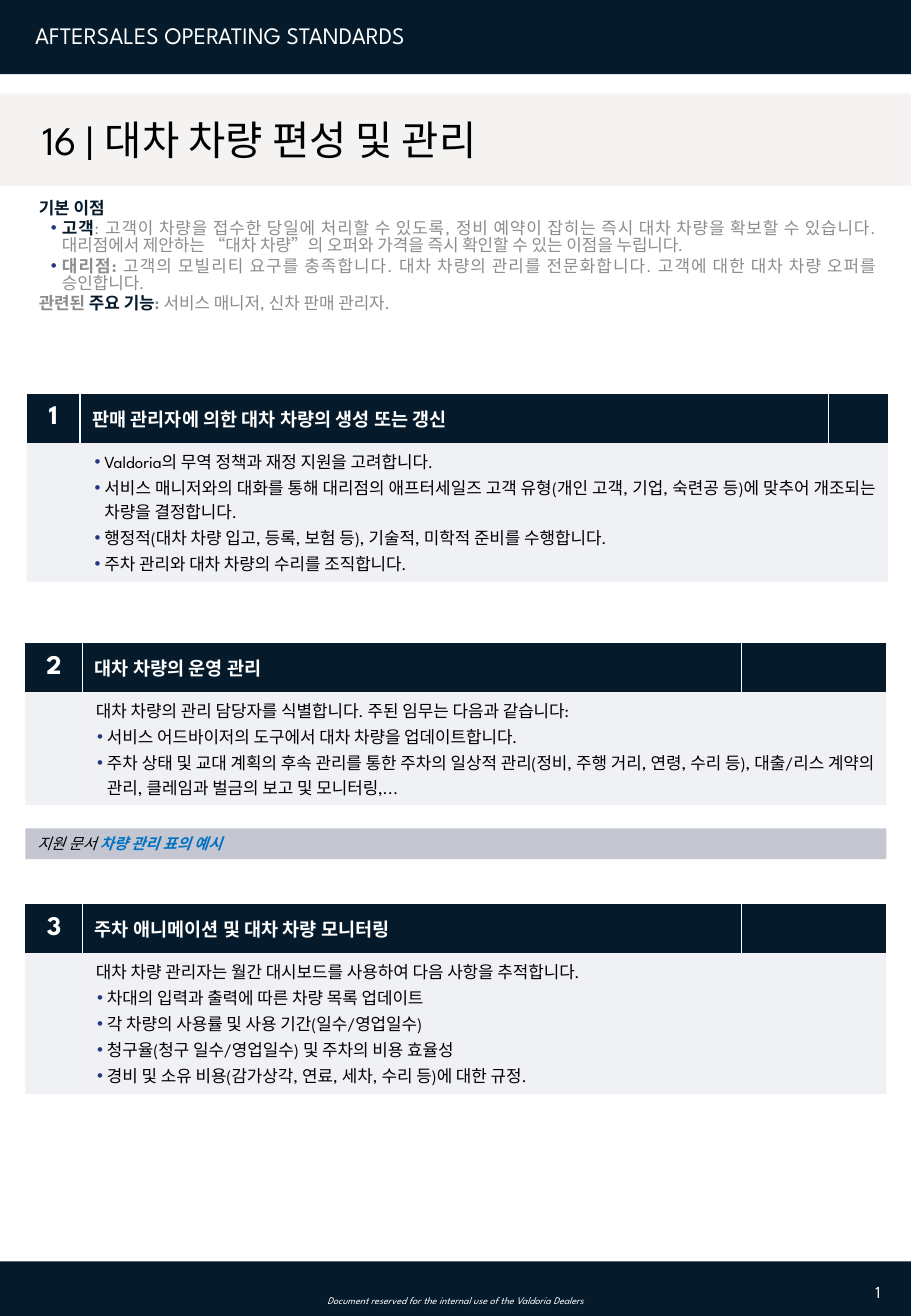
from lxml.etree import SubElement
from pptx import Presentation
from pptx.dml.color import RGBColor
from pptx.enum.shapes import MSO_SHAPE
from pptx.enum.text import MSO_ANCHOR, MSO_AUTO_SIZE, PP_ALIGN
from pptx.oxml import parse_xml
from pptx.oxml.ns import nsdecls, qn
from pptx.util import Pt

FACE = "League Spartan"
NAVY, WHITE, BLACK, GRAY = "051A2B", "FFFFFF", "000000", "8C8C8C"
PLAIN = "{2D5ABB26-0587-4C30-8999-92F81FD0307C}"


def paint(fill, color):
    fill.solid()
    fill.fore_color.rgb = RGBColor.from_string(color)


def mark(para, dot):
    props = para._p.get_or_add_pPr()
    if dot:
        tint = SubElement(props, qn("a:buClr"))
        SubElement(tint, qn("a:srgbClr"), val="243782")
        SubElement(props, qn("a:buFont"), typeface="Arial")
        SubElement(props, qn("a:buChar"), char="•")
    else:
        SubElement(props, qn("a:buNone"))


def write(frame, text, size=10, color=BLACK, bold=False, italic=False,
          align=PP_ALIGN.LEFT, left=0, hang=0, before=0, after=0, line=1.0,
          dot=False, join=False):
    """Add a paragraph, or with join a further run to the last one."""
    para = frame.paragraphs[-1]
    if not join:
        first = not frame.text
        if not first:
            para = frame.add_paragraph()
        props = para._p.get_or_add_pPr()
        props.set("marL", str(Pt(left)))
        props.set("indent", str(Pt(-hang)))
        para.alignment = align
        para.line_spacing = line
        para.space_before = Pt(0 if first else before)
        para.space_after = Pt(after)
        mark(para, dot)
    run = para.add_run()
    run.text = text
    font = run.font
    font.name, font.size, font.bold, font.italic = FACE, Pt(size), bold, italic
    font.color.rgb = RGBColor.from_string(color)


def setup(frame, side=7.2, edge=3.6, anchor=MSO_ANCHOR.MIDDLE):
    frame.word_wrap = True
    frame.auto_size = MSO_AUTO_SIZE.NONE
    frame.margin_left = frame.margin_right = Pt(side)
    frame.margin_top = frame.margin_bottom = Pt(edge)
    frame.vertical_anchor = anchor
    return frame


def place(shape, box):
    shape.left, shape.top, shape.width, shape.height = map(Pt, box)


def bar(slide, box, color):
    shape = slide.shapes.add_shape(MSO_SHAPE.RECTANGLE, *map(Pt, box))
    shape.shadow.inherit = False
    paint(shape.fill, color)
    shape.line.fill.background()
    return shape


def label(slide, box, text, side=7.2, edge=3.6, **look):
    shape = slide.shapes.add_textbox(*map(Pt, box))
    write(setup(shape.text_frame, side, edge), text, **look)


def header(slide, x, y, w, h):
    bar(slide, (x, y, w, h), NAVY)
    label(slide, (x + 15, y + 11.5, 343, 21), "AFTERSALES OPERATING STANDARDS",
          side=5.8, edge=2.9, size=14, color=WHITE, line=0.9)


def footer(slide, x, y, w, h):
    bar(slide, (x, y, w, h), NAVY)
    label(slide, (x + 15, y + 18.7, w - 30, 9),
          "Document reserved for the internal use of the Valdoria Dealers",
          side=0, edge=0, size=6, color=WHITE, italic=True,
          align=PP_ALIGN.CENTER)
    label(slide, (x + w - 55, y + 8.6, 44, 19.4), "1", color=WHITE,
          align=PP_ALIGN.RIGHT)


def title(slide, *box):
    shape = slide.shapes.title
    place(shape, box)
    paint(shape.fill, "F4F3F1")
    write(setup(shape.text_frame), "16 | 대차 차량 편성 및 관리", size=24, left=18)


def intro(slide, *box):
    shape = slide.placeholders[1]
    place(shape, box)
    frame = setup(shape.text_frame, anchor=MSO_ANCHOR.TOP)
    base = dict(align=PP_ALIGN.JUSTIFY, after=2, line=0.84, bold=True)
    item = dict(base, left=13.7, hang=6.5, dot=True)
    rest = dict(color=GRAY, join=True)
    write(frame, "기본 이점", color=NAVY, **base)
    write(frame, "고객", color=NAVY, **item)
    write(frame, ": 고객이 차량을 접수한 당일에 처리할 수 있도록, 정비 예약이 잡히는 즉시 "
          "대차 차량을 확보할 수 있습니다. 대리점에서 제안하는 “대차 차량”의 오퍼와 가격을 "
          "즉시 확인할 수 있는 이점을 누립니다.", **rest)
    write(frame, "대리점:", color=GRAY, **item)
    write(frame, " 고객의 모빌리티 요구를 충족합니다. 대차 차량의 관리를 전문화합니다. "
          "고객에 대한 대차 차량 오퍼를 승인합니다.", **rest)
    write(frame, "관련된 ", color=GRAY, **base)
    write(frame, "주요 기능", color=NAVY, bold=True, join=True)
    write(frame, ":", bold=True, **rest)
    write(frame, " 서비스 매니저, 신차 판매 관리자.", **rest)


def edge(cell, side):
    cell._tc.get_or_add_tcPr().insert(0, parse_xml(
        f'<a:{side} {nsdecls("a")} w="{Pt(1)}"><a:solidFill>'
        f'<a:srgbClr val="{WHITE}"/></a:solidFill></a:{side}>'))


def step(slide, x, y, cols, rows, num, head, items, lead=None):
    """Draw a numbered table: a dark heading over a list of items."""
    box = map(Pt, (x, y, sum(cols), sum(rows)))
    table = slide.shapes.add_table(2, len(cols), *box).table
    table.first_row = table.horz_banding = False
    table._tbl.tblPr[0].text = PLAIN
    for col, width in zip(table.columns, cols):
        col.width = Pt(width)
    for row, height in zip(table.rows, rows):
        row.height = Pt(height)
    table.cell(1, 1).merge(table.cell(1, 2))
    for i, row in enumerate(table.rows):
        for cell in row.cells:
            cell.vertical_anchor = MSO_ANCHOR.MIDDLE
            paint(cell.fill, "E7E9ED" if i else NAVY)
            if i:
                tint = cell._tc.tcPr.find(".//" + qn("a:srgbClr"))
                SubElement(tint, qn("a:alpha"), val="60000")
    edge(table.cell(0, 0), "lnR")
    edge(table.cell(0, 1), "lnL")
    write(table.cell(0, 0).text_frame, num, size=16, color=WHITE, bold=True,
          align=PP_ALIGN.CENTER)
    write(table.cell(0, 1).text_frame, head, size=11, color=WHITE, bold=True)
    frame = table.cell(1, 1).text_frame
    if lead:
        write(frame, lead, align=PP_ALIGN.JUSTIFY, left=0.7)
    for item in items:
        write(frame, item, align=PP_ALIGN.JUSTIFY, left=7.2, hang=5.8,
              before=1, dot=True)


def aid(slide, *box):
    frame = setup(bar(slide, box, "C4C7D2").text_frame, edge=0)
    write(frame, "지원 문서 ", size=9, italic=True)
    write(frame, "차량 관리 표의 예시", size=9, color="0070C0", bold=True,
          italic=True, join=True)


def main():
    deck = Presentation()
    deck.slide_width, deck.slide_height = Pt(540), Pt(779.76)
    slide = deck.slides.add_slide(deck.slide_layouts[1])
    header(slide, 0, 0, 540, 44)
    footer(slide, 0, 747.4, 540, 32.4)
    title(slide, 0, 55.4, 540, 54.8)
    intro(slide, 15.8, 115.2, 510.5, 111.6)
    step(slide, 15.8, 233.3, (31.7, 443.5, 35.3), (28.2, 81), "1",
         "판매 관리자에 의한 대차 차량의 생성 또는 갱신", (
             "Valdoria의 무역 정책과 재정 지원을 고려합니다.",
             "서비스 매니저와의 대화를 통해 대리점의 애프터세일즈 고객 유형"
             "(개인 고객, 기업, 숙련공 등)에 맞추어 개조되는 차량을 결정합니다.",
             "행정적(대차 차량 입고, 등록, 보험 등), 기술적, 미학적 준비를 수행합니다.",
             "주차 관리와 대차 차량의 수리를 조직합니다."))
    cols = (34, 390.5, 86)
    step(slide, 15, 381, cols, (25.6, 66), "2", "대차 차량의 운영 관리", (
        "서비스 어드바이저의 도구에서 대차 차량을 업데이트합니다.",
        "주차 상태 및 교대 계획의 후속 관리를 통한 주차의 일상적 관리"
        "(정비, 주행 거리, 연령, 수리 등), 대출/리스 계약의 관리, "
        "클레임과 벌금의 보고 및 모니터링,..."),
        lead="대차 차량의 관리 담당자를 식별합니다. 주된 임무는 다음과 같습니다:")
    aid(slide, 15, 490.8, 510.5, 18.3)
    step(slide, 15, 535.7, cols, (25.6, 82), "3", "주차 애니메이션 및 대차 차량 모니터링", (
        "차대의 입력과 출력에 따른 차량 목록 업데이트",
        "각 차량의 사용률 및 사용 기간(일수/영업일수)",
        "청구율(청구 일수/영업일수) 및 주차의 비용 효율성",
        "경비 및 소유 비용(감가상각, 연료, 세차, 수리 등)에 대한 규정."),
        lead="대차 차량 관리자는 월간 대시보드를 사용하여 다음 사항을 추적합니다.")
    deck.save("out.pptx")


if __name__ == "__main__":
    main()
